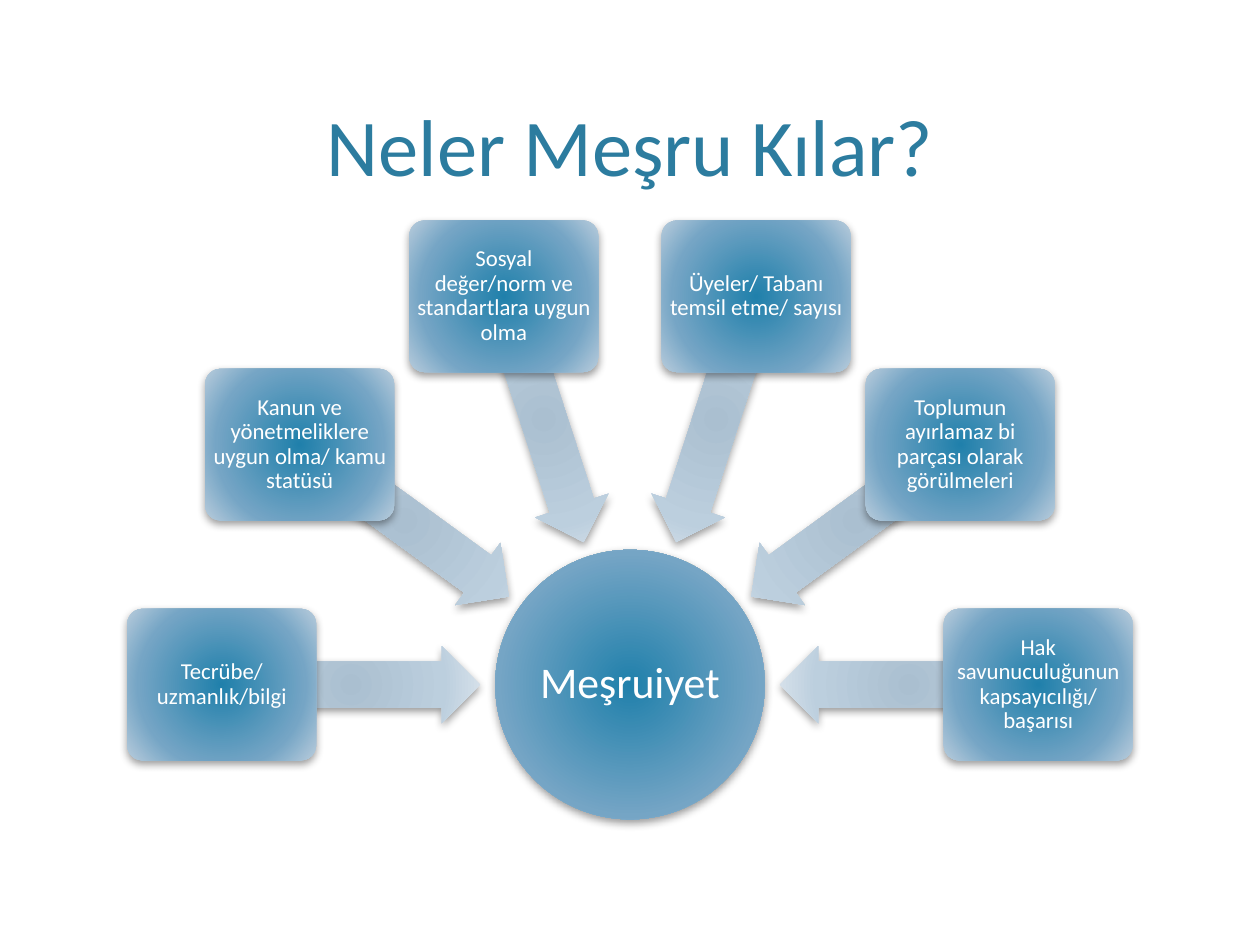
import math

from pptx import Presentation
from pptx import oxml
from pptx import util as u
from pptx.dml import color
from pptx.enum import shapes, text
from pptx.oxml import ns

TITLE_BLUE = color.RGBColor(0x2C, 0x7C, 0x9F)
WHITE = color.RGBColor(0xFF, 0xFF, 0xFF)
BLACK = color.RGBColor(0x00, 0x00, 0x00)
NODE_STOPS = (
    (0, color.RGBColor(0x20, 0x80, 0xAB)),
    (69, color.RGBColor(0x75, 0xA5, 0xC5)),
    (100, color.RGBColor(0xB8, 0xCC, 0xDC)),
)
ARROW_STOPS = (
    (0, color.RGBColor(0xAA, 0xBF, 0xD0)),
    (69, color.RGBColor(0xBC, 0xCF, 0xDE)),
    (100, color.RGBColor(0xD8, 0xE2, 0xEB)),
)

HUB_X, HUB_Y = 360, 391.2
HUB_SIZE = 154
BOX_WIDTH, BOX_HEIGHT = 108, 86.6
BOX_RADIUS = 233.3
ARROW_WIDTH, ARROW_HEIGHT = 147.6, 43.9
ARROW_RADIUS = 159.4
START_ANGLE, STEP_ANGLE = 180, 36

SOURCES = (
    "Tecrübe/uzmanlık/bilgi",
    "Kanun ve yönetmeliklere uygun olma/ kamu statüsü",
    "Sosyal değer/norm ve standartlara uygun olma",
    "Üyeler/ Tabanı temsil etme/ sayısı",
    "Toplumun ayırlamaz bi parçası olarak görülmeleri",
    "Hak savunuculuğunun kapsayıcılığı/ başarısı",
)


def around_hub(radius, angle):
    """Return the point at a clockwise angle and distance from the hub."""
    turn = math.radians(angle)
    return HUB_X + radius * math.cos(turn), HUB_Y + radius * math.sin(turn)


class Painter:
    font = "Calibri"

    def __init__(self, page):
        self.page = page

    def add_words(self, frame, words, size, ink, inset, spacing=1.0):
        frame.word_wrap = True
        frame.margin_left = frame.margin_right = u.Pt(inset)
        frame.margin_top = frame.margin_bottom = u.Pt(inset)
        para = frame.paragraphs[0]
        para.alignment = text.PP_ALIGN.CENTER
        para.line_spacing = spacing
        span = para.add_run()
        span.text = words
        span.font.name = self.font
        span.font.size = u.Pt(size)
        span.font.color.rgb = ink

    def title(self, words, left, top, width, height):
        box = self.page.shapes.add_textbox(
            u.Pt(left), u.Pt(top), u.Pt(width), u.Pt(height))
        box.text_frame.vertical_anchor = text.MSO_ANCHOR.BOTTOM
        self.add_words(box.text_frame, words, 46, TITLE_BLUE, 3.6)

    def glow(self, shape, stops):
        """Give the shape a circular gradient and a soft shadow below."""
        shape.line.fill.background()
        shape.shadow.inherit = False
        shape.fill.gradient()
        properties = shape._element.spPr
        marks = "".join(
            f'<a:gs pos="{place * 1000}"><a:srgbClr val="{tone}"/></a:gs>'
            for place, tone in stops)
        gradient = oxml.parse_xml(
            f'<a:gradFill {ns.nsdecls("a")} rotWithShape="1">'
            f'<a:gsLst>{marks}</a:gsLst><a:path path="circle">'
            '<a:fillToRect l="100000" t="100000" r="100000" b="100000"/>'
            '</a:path></a:gradFill>')
        properties.replace(properties.find(ns.qn("a:gradFill")), gradient)
        properties.find(ns.qn("a:effectLst")).append(oxml.parse_xml(
            f'<a:outerShdw {ns.nsdecls("a")} blurRad="{u.Pt(5)}" '
            f'dist="{u.Pt(2)}" dir="5400000" rotWithShape="0">'
            f'<a:srgbClr val="{BLACK}"><a:alpha val="40000"/></a:srgbClr>'
            '</a:outerShdw>'))

    def centred(self, kind, center, width, height, stops):
        x, y = center
        shape = self.page.shapes.add_shape(
            kind, u.Pt(x - width / 2), u.Pt(y - height / 2),
            u.Pt(width), u.Pt(height))
        self.glow(shape, stops)
        return shape

    def hub(self, words):
        circle = self.centred(shapes.MSO_SHAPE.OVAL, (HUB_X, HUB_Y),
                              HUB_SIZE, HUB_SIZE, NODE_STOPS)
        circle.text_frame.vertical_anchor = text.MSO_ANCHOR.MIDDLE
        self.add_words(circle.text_frame, words, 25, WHITE, 1.25, 0.9)

    def arrow(self, angle):
        arrow = self.centred(
            shapes.MSO_SHAPE.LEFT_ARROW, around_hub(ARROW_RADIUS, angle),
            ARROW_WIDTH, ARROW_HEIGHT, ARROW_STOPS)
        arrow.adjustments[0] = 0.6
        arrow.adjustments[1] = 0.5
        arrow.rotation = angle % 360

    def box(self, words, angle):
        box = self.centred(
            shapes.MSO_SHAPE.ROUNDED_RECTANGLE, around_hub(BOX_RADIUS, angle),
            BOX_WIDTH, BOX_HEIGHT, NODE_STOPS)
        box.adjustments[0] = 0.1
        box.text_frame.vertical_anchor = text.MSO_ANCHOR.MIDDLE
        self.add_words(box.text_frame, words, 13, WHITE, 1.95, 0.9)


def main():
    deck = Presentation()
    deck.slide_width, deck.slide_height = u.Pt(720), u.Pt(540)
    painter = Painter(deck.slides.add_slide(deck.slide_layouts[6]))
    painter.title("Neler Meşru Kılar?", 43.2, 8.6, 633.6, 105.1)
    painter.hub("Meşruiyet")
    for index, words in enumerate(SOURCES):
        angle = START_ANGLE + index * STEP_ANGLE
        painter.arrow(angle)
        painter.box(words, angle)
    deck.save("out.pptx")


if __name__ == "__main__":
    main()
